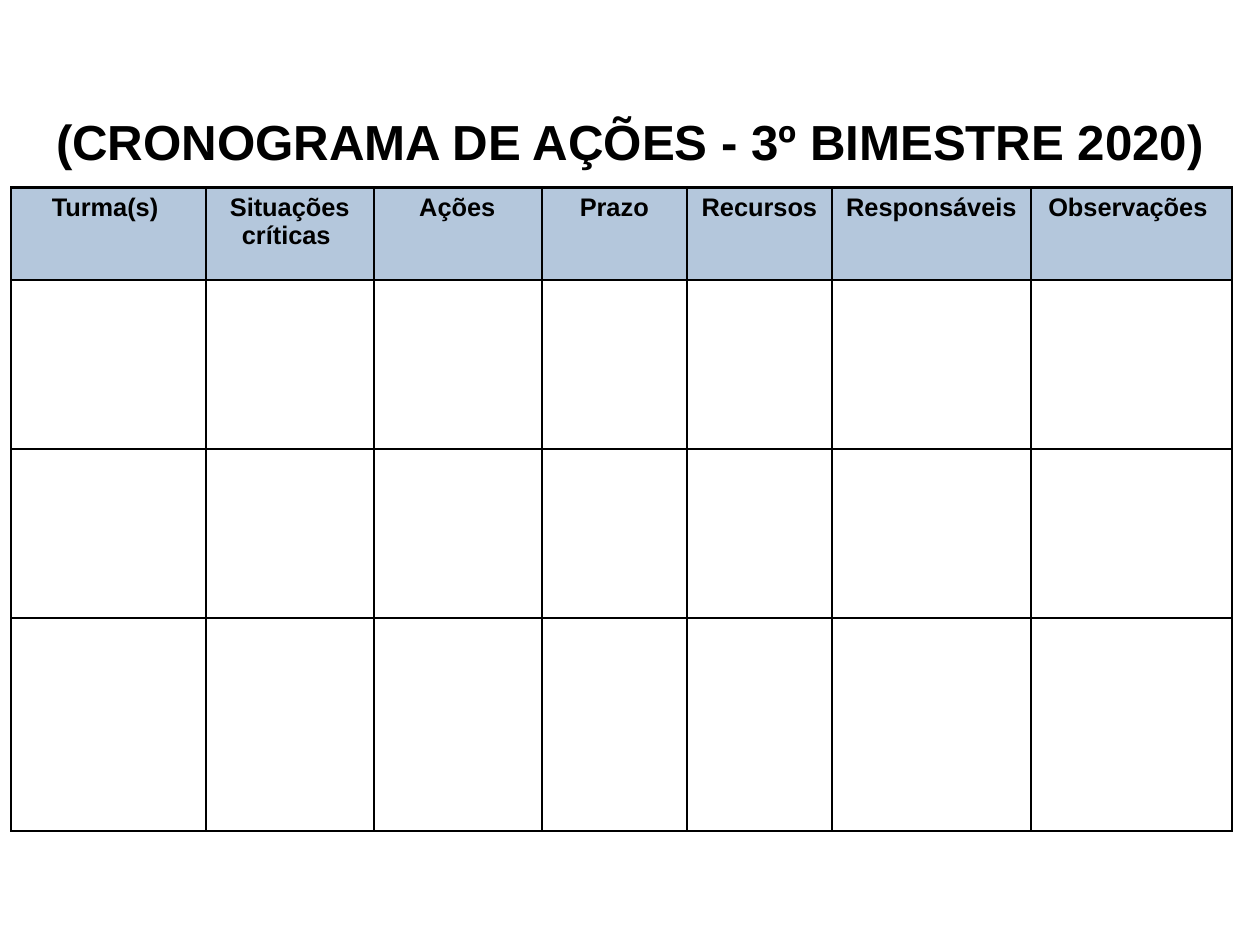
from lxml.etree import SubElement
from pptx import Presentation
from pptx.dml.color import RGBColor
from pptx.enum.text import MSO_ANCHOR, PP_ALIGN
from pptx.oxml.ns import qn
from pptx.util import Cm, Inches, Pt

# Content
TITLE = "(CRONOGRAMA DE AÇÕES - 3º BIMESTRE 2020)"
COLUMNS = [
    ("Turma(s) ", 1.7),
    ("Situações críticas ", 1.47),
    (" Ações ", 1.47),
    ("Prazo", 1.27),
    ("Recursos", 1.27),
    ("Responsáveis ", 1.74),
    ("Observações ", 1.76),
]
ROW_HEIGHTS = [0.81, 1.48, 1.48, 1.86]

BLACK = RGBColor(0x00, 0x00, 0x00)
HEADER_BLUE = RGBColor(0xB4, 0xC7, 0xDC)
BORDER_WIDTH = Pt(1.5)
TITLE_FONT = {"name": "Arial", "size": Pt(31), "bold": True}
HEADER_FONT = {"name": "Arial", "size": Pt(16), "bold": True}
TITLE_FRAME = {
    "word_wrap": True, "vertical_anchor": MSO_ANCHOR.BOTTOM,
    "margin_left": 0, "margin_top": 0, "margin_right": 0, "margin_bottom": 0,
}


def set_attrs(target, values):
    for name, value in values.items():
        setattr(target, name, value)


def write(tf, text, font):
    p = tf.paragraphs[0]
    p.alignment = PP_ALIGN.CENTER
    r = p.add_run()
    r.text = text
    set_attrs(r.font, font)
    r.font.color.rgb = BLACK


def add_borders(cell):
    tc_pr = cell._tc.get_or_add_tcPr()
    for side in ("lnL", "lnR", "lnT", "lnB"):
        line = SubElement(tc_pr, qn(f"a:{side}"), w=str(BORDER_WIDTH))
        fill = SubElement(line, qn("a:solidFill"))
        SubElement(fill, qn("a:srgbClr"), val=str(BLACK))


# A 28 by 21 cm page
prs = Presentation()
prs.slide_width, prs.slide_height = Cm(28), Cm(21)
s = prs.slides.add_slide(prs.slide_layouts[5])

# Title
title = s.shapes.title
set_attrs(title, {"left": Inches(0.39), "top": Inches(0.37),
                  "width": Inches(10.24), "height": Inches(1.12)})
set_attrs(title.text_frame, TITLE_FRAME)
write(title.text_frame, TITLE, TITLE_FONT)

# Schedule table
table = s.shapes.add_table(
    len(ROW_HEIGHTS), len(COLUMNS), Inches(0.1), Inches(1.64),
    Inches(sum(width for _, width in COLUMNS)), Inches(sum(ROW_HEIGHTS)),
).table
set_attrs(table, {"first_row": False, "horz_banding": False})
for row, height in zip(table.rows, ROW_HEIGHTS):
    row.height = Inches(height)
for cell in table.iter_cells():
    add_borders(cell)
    cell.fill.background()

# Column widths and header cells
for i, (heading, width) in enumerate(COLUMNS):
    table.columns[i].width = Inches(width)
    cell = table.cell(0, i)
    cell.fill.solid()
    cell.fill.fore_color.rgb = HEADER_BLUE
    write(cell.text_frame, heading, HEADER_FONT)

prs.save("out.pptx")
